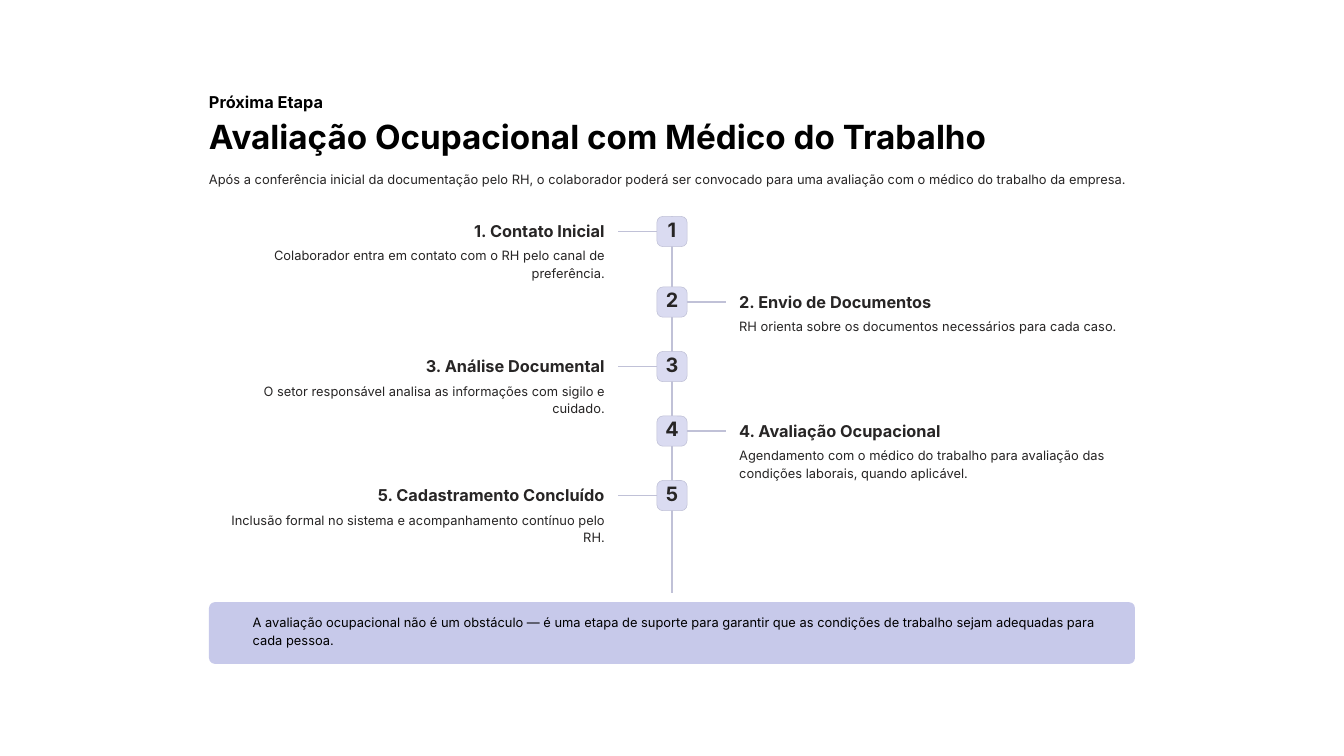
"""Build the occupational assessment timeline slide."""
from lxml import etree
from pptx import Presentation
from pptx import util as u
from pptx.dml.color import RGBColor
from pptx.enum import shapes, text
from pptx.oxml import ns

BLACK = RGBColor(0x00, 0x00, 0x00)
INK = RGBColor(0x27, 0x25, 0x25)
WHITE = RGBColor(0xFF, 0xFF, 0xFF)
LINE = RGBColor(0xC0, 0xC1, 0xD7)
BADGE = RGBColor(0xDA, 0xDB, 0xF1)
BANNER = RGBColor(0xC7, 0xC9, 0xEA)
FONT = "Inter"
LEFT, RIGHT = text.PP_ALIGN.LEFT, text.PP_ALIGN.RIGHT

EYEBROW = "Próxima Etapa"
TITLE = "Avaliação Ocupacional com Médico do Trabalho"
INTRO = (
    "Após a conferência inicial da documentação pelo RH, o colaborador poderá ser "
    "convocado para uma avaliação com o médico do trabalho da empresa."
)
STEPS = [
    ("Contato Inicial", "Colaborador entra em contato com o RH pelo canal de preferência."),
    ("Envio de Documentos", "RH orienta sobre os documentos necessários para cada caso."),
    ("Análise Documental", "O setor responsável analisa as informações com sigilo e cuidado."),
    ("Avaliação Ocupacional", "Agendamento com o médico do trabalho para avaliação das "
     "condições laborais, quando aplicável."),
    ("Cadastramento Concluído", "Inclusão formal no sistema e acompanhamento contínuo pelo RH."),
]
NOTE = (
    "A avaliação ocupacional não é um obstáculo — é uma etapa de suporte para garantir "
    "que as condições de trabalho sejam adequadas para cada pessoa."
)

MARGIN, CONTENT_WIDTH = 3.11, 13.78
CENTER, TIMELINE_TOP, TIMELINE_BOTTOM = 10, 3.22, 8.82
SECOND_TOP, STEP_GAP = 4.27, 0.96
BADGE_SIZE, BRANCH_START, BRANCH_END = 0.45, 0.22, 0.8
TEXT_OFFSET, TEXT_WIDTH = 1, 5.89


def write(shape, content, size, spacing, color=INK, bold=False, align=LEFT):
    frame = shape.text_frame
    frame.margin_left = frame.margin_right = frame.margin_top = frame.margin_bottom = 0
    frame.word_wrap = True
    frame.auto_size = text.MSO_AUTO_SIZE.NONE
    frame.vertical_anchor = text.MSO_ANCHOR.TOP
    frame.text = content
    paragraph = frame.paragraphs[0]
    paragraph.alignment = align
    paragraph.line_spacing = u.Pt(spacing)
    font = paragraph.runs[0].font
    font.name, font.size, font.bold = FONT, u.Pt(size), bold
    font.color.rgb = color


def add_text(slide, box, content, **style):
    write(slide.shapes.add_textbox(*map(u.Inches, box)), content, **style)


def add_line(slide, *ends):
    connector = slide.shapes.add_connector(
        shapes.MSO_CONNECTOR.STRAIGHT, *map(u.Inches, ends))
    connector.line.color.rgb = LINE
    connector.line.width = u.Pt(1.5)
    etree.SubElement(connector._element.spPr, ns.qn("a:effectLst"))


def add_rounded(slide, box, radius, fill, outline=None):
    shape = slide.shapes.add_shape(
        shapes.MSO_SHAPE.ROUNDED_RECTANGLE, *map(u.Inches, box))
    shape.adjustments[0] = radius / min(box[2:])
    shape.shadow.inherit = False
    shape.fill.solid()
    shape.fill.fore_color.rgb = fill
    if outline:
        shape.line.color.rgb = outline
        shape.line.width = u.Pt(0.6)
    else:
        shape.line.fill.background()
    return shape


def add_step(slide, index, name, description):
    top = SECOND_TOP + (index - 1) * STEP_GAP if index else TIMELINE_TOP
    on_left = index % 2 == 0
    side = -1 if on_left else 1
    align = RIGHT if on_left else LEFT
    text_left = CENTER - TEXT_OFFSET - TEXT_WIDTH if on_left else CENTER + TEXT_OFFSET
    middle = top + BADGE_SIZE / 2
    add_line(slide, CENTER + side * BRANCH_START, middle, CENTER + side * BRANCH_END, middle)
    badge = add_rounded(
        slide, (CENTER - BADGE_SIZE / 2, top, BADGE_SIZE, BADGE_SIZE), 0.09, BADGE, LINE)
    write(badge, str(index + 1), 21.2, 21.2, bold=True, align=text.PP_ALIGN.CENTER)
    badge.text_frame.margin_top = u.Inches(0.05)
    add_text(slide, (text_left, top + 0.06, TEXT_WIDTH, 0.32), f"{index + 1}. {name}",
             size=17.5, spacing=21.9, bold=True, align=align)
    add_text(slide, (text_left, top + 0.44, TEXT_WIDTH, 0.55), description,
             size=13.8, spacing=18.8, align=align)


def main():
    presentation = Presentation()
    presentation.slide_width, presentation.slide_height = u.Inches(20), u.Inches(11.25)
    slide = presentation.slides.add_slide(presentation.slide_layouts[5])
    slide.background.fill.solid()
    slide.background.fill.fore_color.rgb = WHITE

    title = slide.shapes.title
    title.left, title.top = u.Inches(MARGIN), u.Inches(1.71)
    title.width, title.height = u.Inches(CONTENT_WIDTH), u.Inches(0.64)
    write(title, TITLE, 35.6, 44.4, BLACK, bold=True)
    add_text(slide, (MARGIN, 1.36, 2.49, 0.32), EYEBROW,
             size=17.5, spacing=21.9, color=BLACK, bold=True)
    add_text(slide, (MARGIN, 2.53, CONTENT_WIDTH, 0.55), INTRO, size=13.8, spacing=18.8)

    add_line(slide, CENTER, TIMELINE_TOP, CENTER, TIMELINE_BOTTOM)
    for index, (name, description) in enumerate(STEPS):
        add_step(slide, index, name, description)

    add_rounded(slide, (MARGIN, 8.96, CONTENT_WIDTH, 0.92), 0.09, BANNER)
    add_text(slide, (3.76, 9.12, 12.92, 0.55), NOTE, size=13.8, spacing=18.8, color=BLACK)
    presentation.save("out.pptx")


if __name__ == "__main__":
    main()
